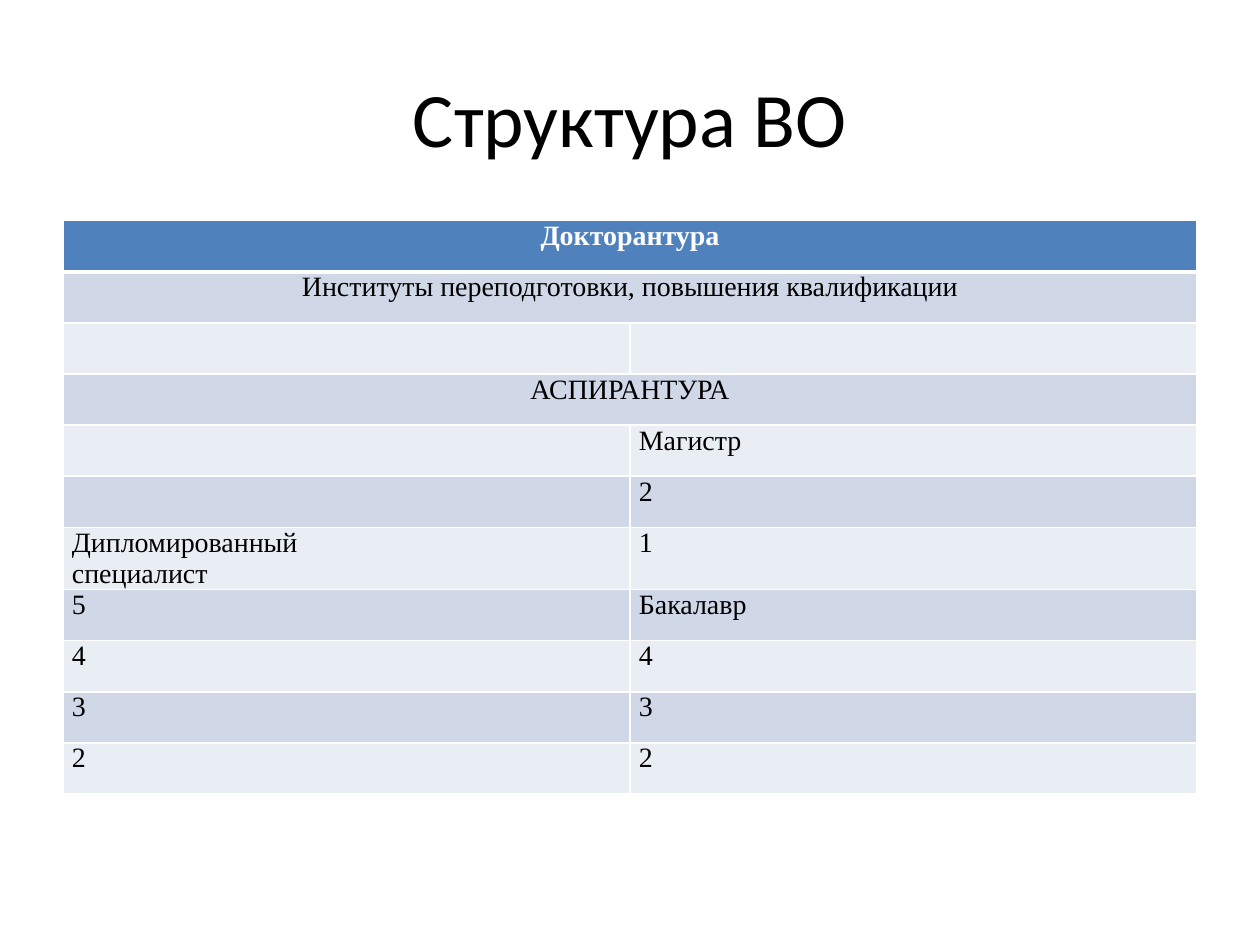
from lxml.etree import SubElement
from pptx import Presentation
from pptx.dml.color import RGBColor
from pptx.enum.text import MSO_ANCHOR, PP_ALIGN
from pptx.oxml.ns import qn
from pptx.util import Cm, Pt

TITLE = "Структура ВО"
ROWS = [
    ("Докторантура",),
    ("Институты переподготовки, повышения квалификации",),
    ("", ""),
    ("АСПИРАНТУРА",),
    ("", "Магистр"),
    ("", "2"),
    ("Дипломированный\nспециалист", "1"),
    ("5", "Бакалавр"),
    ("4", "4"),
    ("3", "3"),
    ("2", "2"),
]
BLACK = RGBColor(0, 0, 0)
WHITE = RGBColor(255, 255, 255)
BLUE = RGBColor(0x4F, 0x81, 0xBD)
BANDS = RGBColor(0xE9, 0xED, 0xF4), RGBColor(0xD0, 0xD8, 0xE8)
LEFT, WIDE, HIGH = Cm(1.27), Cm(22.86), Cm(1.03)


def style(para, font, size, color, bold=False):
    for run in para.runs:
        run.font.name = font
        run.font.size = Pt(size)
        run.font.color.rgb = color
        run.font.bold = bold


def border(cell, row):
    props = cell._tc.get_or_add_tcPr()
    for side in "LRTB":
        thick = (row, side) in ((0, "B"), (1, "T"))
        line = SubElement(props, qn(f"a:ln{side}"), w=str(Pt(3 if thick else 1)))
        fill = SubElement(line, qn("a:solidFill"))
        SubElement(fill, qn("a:srgbClr"), val=str(WHITE))


def paint(cell, row):
    cell.margin_left = cell.margin_right = Cm(0.18)
    cell.margin_top = cell.margin_bottom = 0
    border(cell, row)
    cell.fill.solid()
    cell.fill.fore_color.rgb = BANDS[row % 2] if row else BLUE


deck = Presentation()
deck.slide_width, deck.slide_height = Cm(25.4), Cm(19.05)
slide = deck.slides.add_slide(deck.slide_layouts[5])

title = slide.shapes.title
title.left, title.top, title.width, title.height = LEFT, Cm(0.76), WIDE, Cm(3.18)
title.text_frame.text = TITLE
title.text_frame.vertical_anchor = MSO_ANCHOR.MIDDLE
head = title.text_frame.paragraphs[0]
head.alignment = PP_ALIGN.CENTER
style(head, "Calibri", 44, BLACK)

table = slide.shapes.add_table(
    len(ROWS), 2, LEFT, Cm(4.45), WIDE, HIGH * len(ROWS)).table
for r, texts in enumerate(ROWS):
    table.rows[r].height = HIGH
    merged = len(texts) == 1
    for c in range(2):
        paint(table.cell(r, c), r)
    if merged:
        table.cell(r, 0).merge(table.cell(r, 1))
    for c, text in enumerate(texts):
        frame = table.cell(r, c).text_frame
        frame.text = text
        for para in frame.paragraphs:
            para.alignment = PP_ALIGN.CENTER if merged else PP_ALIGN.LEFT
            style(para, "Times New Roman", 16, BLACK if r else WHITE, r == 0)

deck.save("out.pptx")
